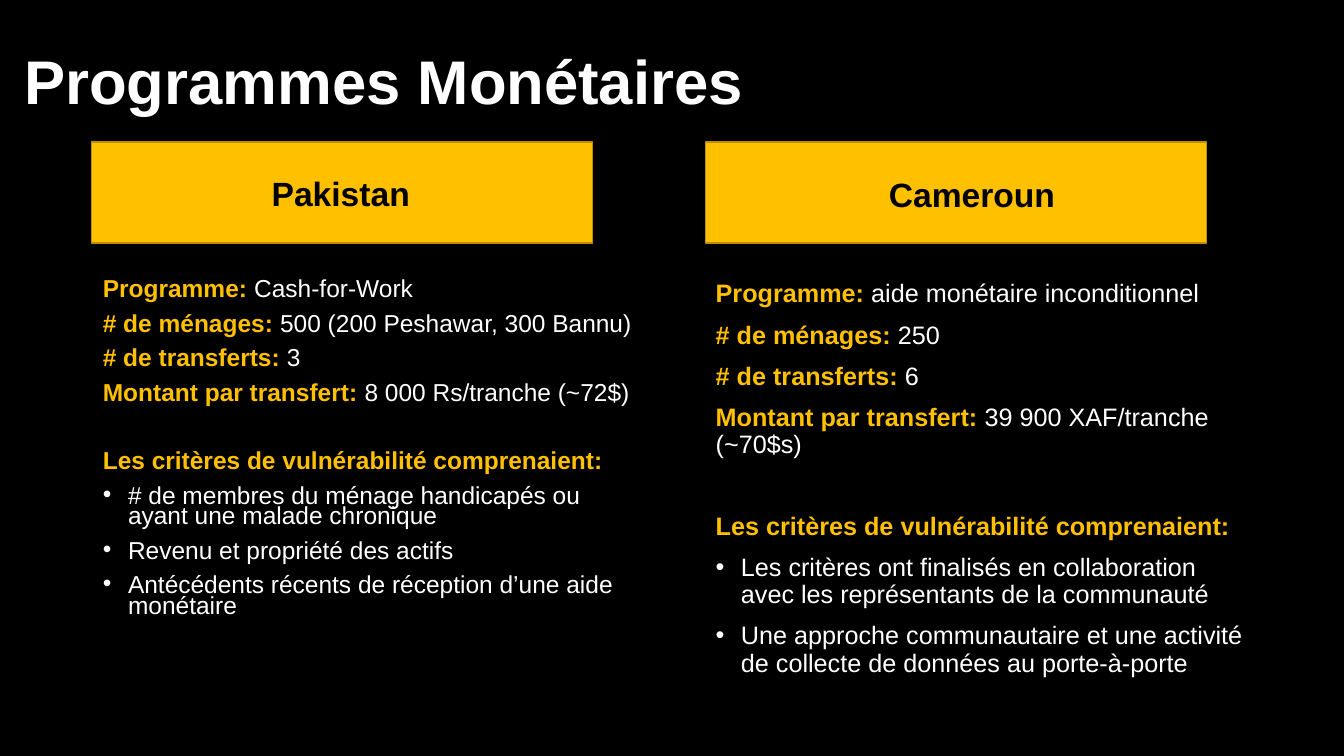
from lxml import etree
from pptx import Presentation
from pptx import util as u
from pptx.dml.color import RGBColor
from pptx.enum import shapes, text
from pptx.oxml.ns import qn

COLOURS = {"night": "000000", "gold": "FFC000", "edge": "BD8E00", "white": "FFFFFF"}
COMPARISON = 4
SPACE_BEFORE = 10
LINE_HEIGHT = 1.15
CRITERIA = "Les critères de vulnérabilité comprenaient:"

# Boxes are left, top, width, height in hundredths of the slide's size.
TITLE_BOX = (1.05, 1.47, 86.27, 19.33)
PROGRAMMES = [
    {
        "country": "Pakistan", "size": 17.5, "leading": 0.7,
        "banner": (6.83, 18.8, 37.28, 13.33),
        "heading": (3, 19.6, 44.71, 9.33),
        "details": (6.9, 36.53, 40.89, 54.93),
        "facts": [
            ("Programme: ", "Cash-for-Work"),
            ("# de ménages: ", "500 (200 Peshawar, 300 Bannu)"),
            ("# de transferts: ", "3"),
            ("Montant par transfert: ", "8 000 Rs/tranche (~72$)"),
        ],
        "criteria": [
            "# de membres du ménage handicapés ou ayant une malade chronique",
            "Revenu et propriété des actifs",
            "Antécédents récents de réception d’une aide monétaire",
        ],
    },
    {
        "country": "Cameroun", "size": 18, "leading": 0.9,
        "banner": (52.5, 18.8, 37.28, 13.33),
        "heading": (51.01, 19.47, 42.61, 9.6),
        "details": (52.5, 36.53, 41.11, 56),
        "facts": [
            ("Programme: ", "aide monétaire inconditionnel"),
            ("# de ménages: ", "250"),
            ("# de transferts: ", "6"),
            ("Montant par transfert: ", "39 900 XAF/tranche (~70$s)"),
        ],
        "criteria": [
            "Les critères ont finalisés en collaboration avec les représentants de la communauté",
            "Une approche communautaire et une activité de collecte de données au porte-à-porte",
        ],
    },
]


def apply(target, formats):
    for name, value in formats.items():
        setattr(target, name, value)


def rgb(colour):
    return RGBColor.from_string(COLOURS[colour])


class Board:
    """Holds the deck, its current slide and the shared text style."""

    font = "Arial"

    def __init__(self):
        self.deck = Presentation()
        apply(self.deck, {"slide_width": u.Inches(13.33), "slide_height": u.Inches(7.5)})
        self.slide = self.deck.slides.add_slide(self.deck.slide_layouts[COMPARISON])
        backdrop = self.slide.background.fill
        backdrop.solid()
        backdrop.fore_color.rgb = rgb("night")

    def place(self, box):
        """Turn a box in hundredths of the slide into lengths."""
        sides = (self.deck.slide_width, self.deck.slide_height) * 2
        return [u.Emu(round(share * side / 100)) for share, side in zip(box, sides)]

    def holder(self, idx, box, anchor):
        """Move a placeholder and prepare its text frame."""
        holder = self.slide.placeholders[idx]
        apply(holder, dict(zip(("left", "top", "width", "height"), self.place(box))))
        apply(holder.text_frame, {
            "word_wrap": True,
            "auto_size": text.MSO_AUTO_SIZE.NONE,
            "vertical_anchor": anchor,
        })
        return holder

    def paragraph(self, holder, parts, size, leading=0.9, before=SPACE_BEFORE,
                  align=text.PP_ALIGN.LEFT, bullet=False):
        """Write one paragraph from (wording, colour, bold) parts."""
        frame = holder.text_frame
        line = frame.paragraphs[0]
        if line.runs:
            line = frame.add_paragraph()
        apply(line, {"alignment": align, "line_spacing": leading,
                     "space_before": u.Pt(before), "space_after": u.Pt(0)})
        indent = u.Inches(0.25) if bullet else 0
        properties = line._p.get_or_add_pPr()
        properties.set("marL", str(indent))
        properties.set("indent", str(-indent))
        if bullet:
            etree.SubElement(properties, qn("a:buFont")).set("typeface", self.font)
            etree.SubElement(properties, qn("a:buChar")).set("char", "•")
        else:
            etree.SubElement(properties, qn("a:buNone"))
        for wording, colour, bold in parts:
            run = line.add_run()
            run.text = wording
            apply(run.font, {"name": self.font, "size": u.Pt(size), "bold": bold})
            run.font.color.rgb = rgb(colour)

    def title(self, wording):
        holder = self.holder(0, TITLE_BOX, text.MSO_ANCHOR.MIDDLE)
        self.paragraph(holder, [(wording, "white", True)], 44, before=0)

    def banner(self, box, heading):
        """Draw a gold bar directly behind its heading."""
        bar = self.slide.shapes.add_shape(shapes.MSO_SHAPE.RECTANGLE, *self.place(box))
        bar.shadow.inherit = False
        bar.fill.solid()
        bar.fill.fore_color.rgb = rgb("gold")
        bar.line.color.rgb = rgb("edge")
        bar.line.width = u.Pt(1)
        heading._element.addprevious(bar._element)

    def heading(self, idx, box, country):
        holder = self.holder(idx, box, text.MSO_ANCHOR.BOTTOM)
        self.paragraph(holder, [(country, "night", True)], 24, align=text.PP_ALIGN.CENTER)
        return holder

    def details(self, idx, programme):
        holder = self.holder(idx, programme["details"], text.MSO_ANCHOR.TOP)
        style = {key: programme[key] for key in ("size", "leading")}
        for label, value in programme["facts"]:
            self.paragraph(holder, [(label, "gold", True), (value, "white", False)], **style)
        line_gap = style["size"] * style["leading"] * LINE_HEIGHT
        self.paragraph(holder, [(CRITERIA, "gold", True)],
                       before=round(2 * SPACE_BEFORE + line_gap, 1), **style)
        for criterion in programme["criteria"]:
            self.paragraph(holder, [(criterion, "white", False)], bullet=True, **style)


def main():
    board = Board()
    board.title("Programmes Monétaires")
    for column, programme in enumerate(PROGRAMMES):
        heading = board.heading(2 * column + 1, programme["heading"], programme["country"])
        board.banner(programme["banner"], heading)
        board.details(2 * column + 2, programme)
    board.deck.save("out.pptx")


if __name__ == "__main__":
    main()
